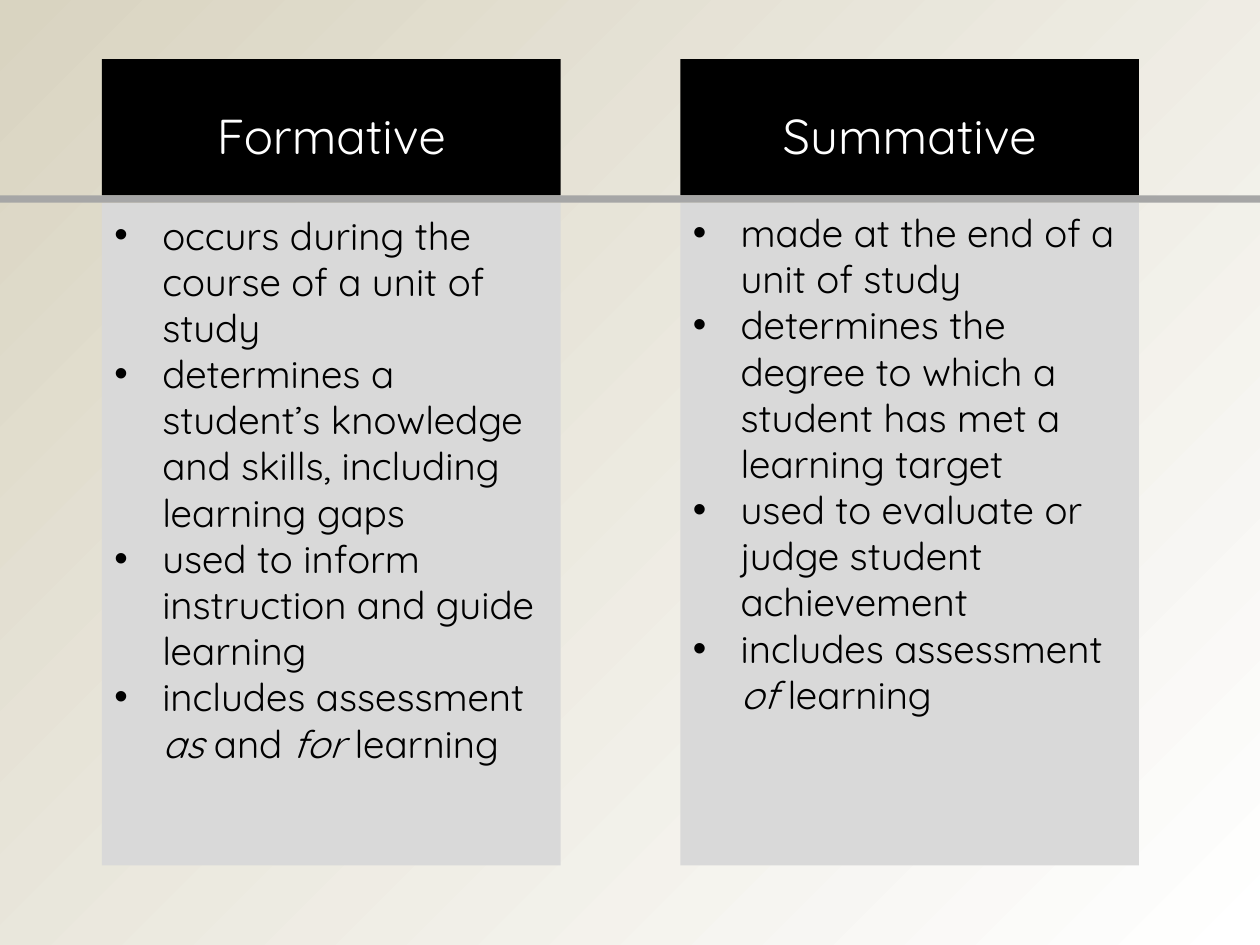
from lxml import etree
from pptx import Presentation
from pptx.dml.color import RGBColor
from pptx.enum.shapes import MSO_SHAPE
from pptx.enum.text import PP_ALIGN
from pptx.oxml.ns import qn
from pptx.util import Inches, Pt

RECT = MSO_SHAPE.RECTANGLE
CENTER, LEFT = PP_ALIGN.CENTER, PP_ALIGN.LEFT
BLACK = RGBColor(0x00, 0x00, 0x00)
WHITE = RGBColor(0xFF, 0xFF, 0xFF)
PANEL = RGBColor(0xD9, 0xD9, 0xD9)
RULE = RGBColor(0xA6, 0xA6, 0xA6)
SAND = RGBColor(0xD9, 0xD4, 0xC1)
FONT = "Quicksand"

# Content: each point is a list of runs, italic at the odd places
COLUMNS = [
    {"head": "Formative", "left": 0.81, "top": 1.63, "high": 5.32, "points": [
        ["occurs during the course of a unit of study"],
        ["determines a student’s knowledge and skills, including learning gaps"],
        ["used to inform instruction and guide learning"],
        ["includes assessment ", "as", " and ", "for", " learning"],
    ]},
    {"head": "Summative", "left": 5.4, "top": 1.61, "high": 4.17, "points": [
        ["made at the end of a unit of study"],
        ["determines the degree to which a student has met a learning target"],
        ["used to evaluate or judge student achievement"],
        ["includes assessment ", "of", " learning"],
    ]},
]
WIDE = 3.64
HEAD_TOP, HEAD_HIGH = 0.47, 1.08
RULE_TOP, RULE_HIGH = HEAD_TOP + HEAD_HIGH, 0.06
BODY_TOP, BODY_HIGH = RULE_TOP + RULE_HIGH, 5.26
INDENT = Inches(0.38)


def add_rect(slide, left, top, wide, high, color):
    box = slide.shapes.add_shape(
        RECT, Inches(left), Inches(top), Inches(wide), Inches(high))
    box.shadow.inherit = False
    box.fill.solid()
    box.fill.fore_color.rgb = color
    box.line.fill.background()


def add_text(slide, left, top, high, paras, size, color, align):
    box = slide.shapes.add_textbox(
        Inches(left), Inches(top), Inches(WIDE), Inches(high))
    frame = box.text_frame
    frame.word_wrap = True
    for i, runs in enumerate(paras):
        para = frame.add_paragraph() if i else frame.paragraphs[0]
        para.alignment = align
        for j, text in enumerate(runs):
            run = para.add_run()
            run.text = text
            run.font.name = FONT
            run.font.size = Pt(size)
            run.font.color.rgb = color
            if j % 2:
                run.font.italic = True
    return frame


def add_bullet(para):
    props = para._p.get_or_add_pPr()
    props.set("marL", str(INDENT))
    props.set("indent", str(-INDENT))
    etree.SubElement(props, qn("a:buFont"), typeface="Arial")
    etree.SubElement(props, qn("a:buChar"), char="•")


def main():
    prs = Presentation()
    prs.slide_width, prs.slide_height = Inches(10), Inches(7.5)
    slide = prs.slides.add_slide(prs.slide_layouts[6])

    # Background, from top left to bottom right
    fill = slide.background.fill
    fill.gradient()
    fill.gradient_angle = 315
    for stop, color in zip(fill.gradient_stops, (SAND, WHITE)):
        stop.color.rgb = color

    # Panels and the rule across them
    for col in COLUMNS:
        add_rect(slide, col["left"], BODY_TOP, WIDE, BODY_HIGH, PANEL)
        add_rect(slide, col["left"], HEAD_TOP, WIDE, HEAD_HIGH, BLACK)
    add_rect(slide, 0, RULE_TOP, 10, RULE_HIGH, RULE)

    # Headings and points
    for col in COLUMNS:
        add_text(slide, col["left"], 0.79, 0.57, [[col["head"]]],
                 28, WHITE, CENTER)
        body = add_text(slide, col["left"], col["top"], col["high"],
                        col["points"], 22, BLACK, LEFT)
        for para in body.paragraphs:
            add_bullet(para)

    prs.save("out.pptx")


if __name__ == "__main__":
    main()
